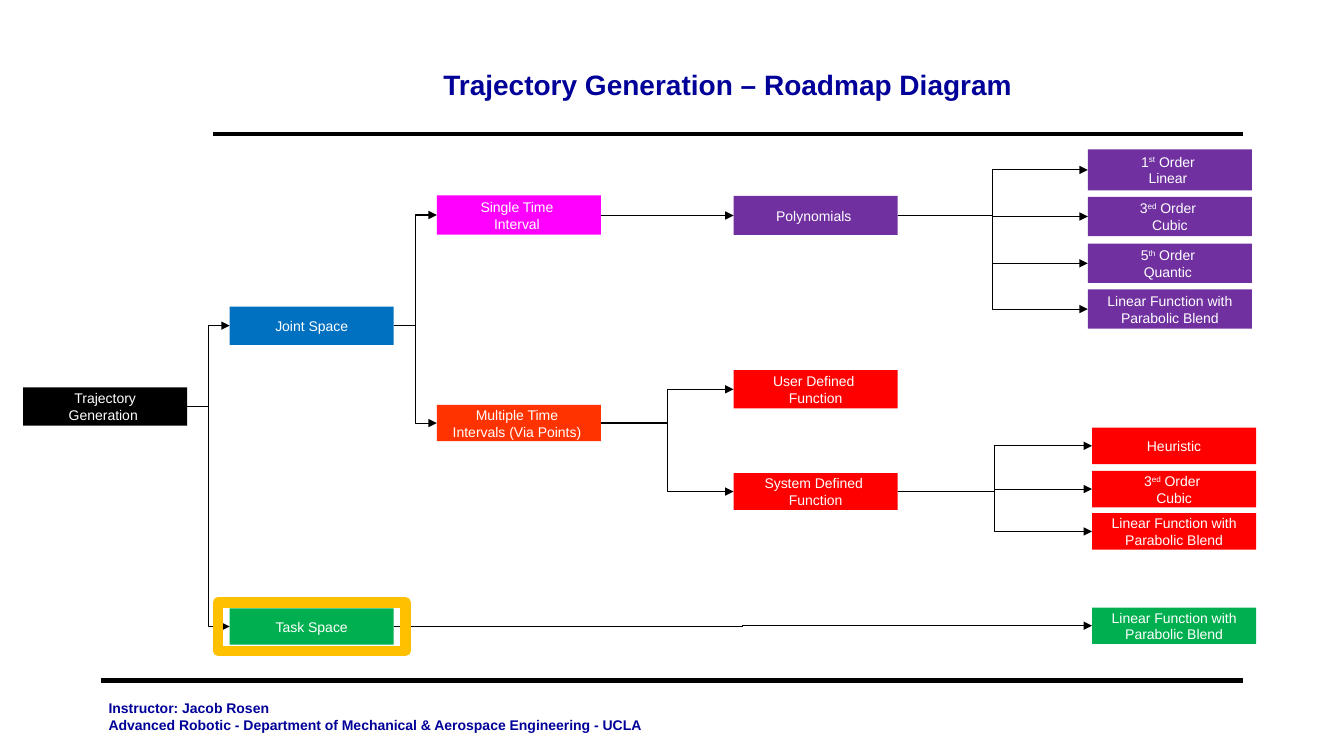
from pptx import Presentation
from pptx.dml.color import RGBColor
from pptx.enum.shapes import MSO_CONNECTOR, MSO_SHAPE
from pptx.enum.text import MSO_ANCHOR, PP_ALIGN
from pptx.oxml.ns import qn
from pptx.util import Pt
from lxml import etree

RECTANGLE = MSO_SHAPE.RECTANGLE
STRAIGHT, ELBOW = MSO_CONNECTOR.STRAIGHT, MSO_CONNECTOR.ELBOW
LEFT, CENTER = PP_ALIGN.LEFT, PP_ALIGN.CENTER
TOP, MIDDLE = MSO_ANCHOR.TOP, MSO_ANCHOR.MIDDLE
LEFT_SITE, RIGHT_SITE = 1, 3

BLACK = RGBColor(0x00, 0x00, 0x00)
WHITE = RGBColor(0xFF, 0xFF, 0xFF)
NAVY = RGBColor(0x00, 0x00, 0x99)
BLUE = RGBColor(0x00, 0x70, 0xC0)
GREEN = RGBColor(0x00, 0xB0, 0x50)
MAGENTA = RGBColor(0xFF, 0x00, 0xFF)
ORANGE = RGBColor(0xFF, 0x33, 0x00)
PURPLE = RGBColor(0x70, 0x30, 0xA0)
RED = RGBColor(0xFF, 0x00, 0x00)
GOLD = RGBColor(0xFF, 0xC0, 0x00)

NODE_WIDTH = 117.2
ROOT_X, SPACE_X, INTERVAL_X, METHOD_X = 16.5, 164, 312, 524
POLYNOMIAL_X, SYSTEM_X = 777, 780
BLEND = "Linear Function with\nParabolic Blend"

NODES = {
    "root": ("Trajectory\nGeneration ", ROOT_X, 276.7, 27.3, BLACK),
    "joint": ("Joint Space", SPACE_X, 219, 27.3, BLUE),
    "task": ("Task Space", SPACE_X, 434.5, 26, GREEN),
    "single": ("Single Time \nInterval ", INTERVAL_X, 139.5, 28.2, MAGENTA),
    "multiple": ("Multiple Time \nIntervals (Via Points) ", INTERVAL_X, 289.2, 26, ORANGE),
    "polynomials": ("Polynomials ", METHOD_X, 139.9, 28, PURPLE),
    "first": ("1^st^ Order \nLinear ", POLYNOMIAL_X, 106.8, 29.2, PURPLE),
    "third": ("3^ed^ Order \nCubic", POLYNOMIAL_X, 140.7, 28, PURPLE),
    "fifth": ("5^th^ Order \nQuantic ", POLYNOMIAL_X, 174.1, 28, PURPLE),
    "blend": (BLEND, POLYNOMIAL_X, 206.8, 28, PURPLE),
    "user": ("User Defined \nFunction", METHOD_X, 264.4, 27.4, RED),
    "system": ("System Defined \nFunction", METHOD_X, 338, 26.2, RED),
    "task blend": (BLEND, SYSTEM_X, 434, 26, GREEN),
    "heuristic": ("Heuristic", SYSTEM_X, 305.5, 26, RED),
    "system third": ("3^ed^ Order \nCubic", SYSTEM_X, 336.4, 26, RED),
    "system blend": (BLEND, SYSTEM_X, 366.6, 26, RED),
}

BRANCHES = {
    "root": ("joint", "task"),
    "joint": ("single", "multiple"),
    "single": ("polynomials",),
    "polynomials": ("first", "third", "fifth", "blend"),
    "multiple": ("user", "system"),
    "system": ("heuristic", "system third", "system blend"),
    "task": ("task blend",),
}


def set_attributes(target, values):
    for name, value in values.items():
        setattr(target, name, value)


def write_text(frame, text, size, color, bold=False, align=CENTER, anchor=MIDDLE):
    set_attributes(frame, {
        "word_wrap": True, "vertical_anchor": anchor,
        "margin_left": Pt(7.2), "margin_right": Pt(7.2),
        "margin_top": Pt(3.6), "margin_bottom": Pt(3.6),
    })
    for index, line in enumerate(text.split("\n")):
        paragraph = frame.paragraphs[0] if index == 0 else frame.add_paragraph()
        paragraph.alignment = align
        for position, part in enumerate(line.split("^")):
            run = paragraph.add_run()
            run.text = part
            set_attributes(run.font, {"name": "Arial", "size": Pt(size), "bold": bold})
            run.font.color.rgb = color
            if position % 2:
                run._r.get_or_add_rPr().set("baseline", "30000")


def add_title(slide, text):
    title = slide.shapes.title
    set_attributes(title, {
        "left": Pt(152), "top": Pt(30.2), "width": Pt(735.8), "height": Pt(60),
    })
    write_text(title.text_frame, text, 20, NAVY, bold=True)


def add_line(slide, kind, start, end, width):
    line = slide.shapes.add_connector(kind, *(Pt(value) for value in (*start, *end)))
    line.line.color.rgb = BLACK
    line.line.width = Pt(width)
    etree.SubElement(line._element.spPr, qn("a:effectLst"))
    return line


def add_node(slide, text, left, top, height, color):
    node = slide.shapes.add_shape(RECTANGLE, Pt(left), Pt(top), Pt(NODE_WIDTH), Pt(height))
    node.shadow.inherit = False
    node.fill.solid()
    node.fill.fore_color.rgb = color
    node.line.fill.background()
    write_text(node.text_frame, text, 10, WHITE)
    return node


def add_arrow(slide, parent, child):
    arrow = add_line(slide, ELBOW, (0, 0), (0, 0), 0.75)
    arrow.begin_connect(parent, RIGHT_SITE)
    arrow.end_connect(child, LEFT_SITE)
    outline = arrow.line._get_or_add_ln()
    etree.SubElement(outline, qn("a:tailEnd"), type="triangle")


def add_highlight(slide):
    highlight = slide.shapes.add_shape(RECTANGLE, Pt(155.7), Pt(430.4), Pt(134), Pt(34.4))
    highlight.shadow.inherit = False
    highlight.fill.background()
    highlight.line.color.rgb = GOLD
    highlight.line.width = Pt(7.25)
    etree.SubElement(highlight.line._get_or_add_ln(), qn("a:round"))


def add_footer(slide, text):
    footer = slide.shapes.add_textbox(Pt(70.5), Pt(496.2), Pt(534), Pt(30.4))
    write_text(footer.text_frame, text, 10, NAVY, bold=True, align=LEFT, anchor=TOP)


def main():
    presentation = Presentation()
    set_attributes(presentation, {"slide_width": Pt(960), "slide_height": Pt(540)})
    slide = presentation.slides.add_slide(presentation.slide_layouts[5])

    add_line(slide, STRAIGHT, (72, 486), (888, 486), 3)
    add_line(slide, STRAIGHT, (152, 95.8), (888, 95.8), 3)
    add_title(slide, "Trajectory Generation – Roadmap Diagram")

    nodes = {key: add_node(slide, *values) for key, values in NODES.items()}
    for parent, children in BRANCHES.items():
        for child in children:
            add_arrow(slide, nodes[parent], nodes[child])

    add_highlight(slide)
    add_footer(slide, "Instructor: Jacob Rosen\n"
               "Advanced Robotic - Department of Mechanical & Aerospace Engineering - UCLA")
    presentation.save("out.pptx")


if __name__ == "__main__":
    main()
